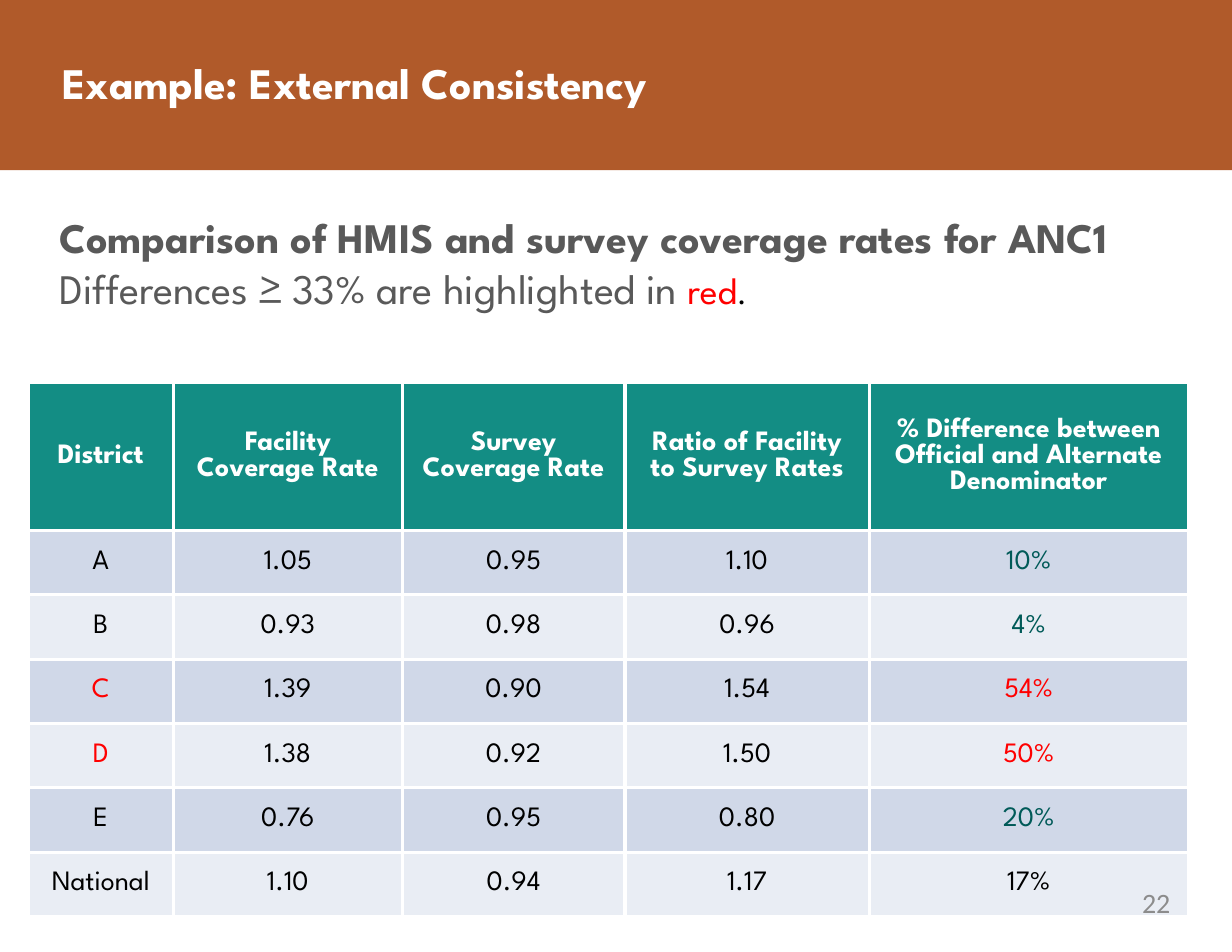
from lxml.etree import SubElement
from pptx import Presentation
from pptx.dml.color import RGBColor
from pptx.enum.shapes import MSO_SHAPE
from pptx.enum.text import MSO_ANCHOR, PP_ALIGN
from pptx.oxml.ns import qn
from pptx.util import Pt

COLORS = {
    "banner": "B05A2A", "white": "FFFFFF", "header": "138D84", "odd": "D0D8E8",
    "even": "E9EDF4", "black": "000000", "green": "005A58", "red": "FF0000",
    "gray": "595959", "number": "8C8C8C",
}
HEADINGS = [
    "District", "Facility Coverage Rate", "Survey Coverage Rate",
    "Ratio of Facility to Survey Rates",
    "% Difference between Official and Alternate Denominator",
]
DISTRICTS = [
    ("A", "1.05", "0.95", "1.10", "10%"),
    ("B", "0.93", "0.98", "0.96", "4%"),
    ("C", "1.39", "0.90", "1.54", "54%"),
    ("D", "1.38", "0.92", "1.50", "50%"),
    ("E", "0.76", "0.95", "0.80", "20%"),
    ("National", "1.10", "0.94", "1.17", "17%"),
]
COLUMN_SHARES = [1.3, 2.04, 1.99, 2.18, 2.85]
HEADER_HEIGHT = 95
THRESHOLD = 33


def color(name):
    """Return the named colour."""
    return RGBColor.from_string(COLORS[name])


def format_run(run, size, color_name, bold=False, font="League Spartan"):
    """Set the font of one run."""
    run.font.size = Pt(size)
    run.font.name = font
    run.font.bold = bold
    run.font.color.rgb = color(color_name)


def add_text(slide, box, runs, align=PP_ALIGN.LEFT, insets=(0, 0)):
    """Add a one-paragraph text box made of (text, format) runs."""
    text_frame = slide.shapes.add_textbox(*map(Pt, box)).text_frame
    text_frame.word_wrap = True
    text_frame.margin_left = text_frame.margin_right = Pt(insets[0])
    text_frame.margin_top = text_frame.margin_bottom = Pt(insets[1])
    paragraph = text_frame.paragraphs[0]
    paragraph.alignment = align
    for text, run_format in runs:
        run = paragraph.add_run()
        run.text = text
        format_run(run, *run_format)


def add_banner(slide, box):
    """Add the colour band with the slide title."""
    left, top, width, height = box
    band = slide.shapes.add_shape(MSO_SHAPE.RECTANGLE, *map(Pt, box))
    band.shadow.inherit = False
    band.fill.solid()
    band.fill.fore_color.rgb = color("banner")
    band.line.fill.background()
    add_text(slide, (left + 40.3, top + 36, width - 34, 33.8),
             [("Example: External Consistency", (28, "white", True))])


def add_introduction(slide, box):
    """Add the comparison heading and the key to the red values."""
    add_text(slide, box, [
        ("Comparison of HMIS and survey coverage rates for ANC1 ", (27, "gray", True)),
        ("Differences ≥ 33% are highlighted in ", (27, "gray")),
        ("red", (24, "red")),
        (".", (20, "black")),
    ], insets=(7.9, 4.3))


def set_borders(cell):
    """Draw white lines on the four sides of a cell."""
    properties = cell._tc.get_or_add_tcPr()
    for index, side in enumerate(("a:lnL", "a:lnR", "a:lnT", "a:lnB")):
        line = properties.makeelement(qn(side), {"w": str(Pt(2.25))})
        fill = SubElement(line, qn("a:solidFill"))
        SubElement(fill, qn("a:srgbClr"), val=COLORS["white"])
        properties.insert(index, line)


def format_cell(cell, text, fill_name, text_name, bold):
    """Fill a table cell and set its centred text."""
    cell.text_frame.text = text
    cell.vertical_anchor = MSO_ANCHOR.MIDDLE
    cell.margin_left = cell.margin_right = Pt(7.9)
    cell.margin_top = cell.margin_bottom = Pt(4.3)
    cell.fill.solid()
    cell.fill.fore_color.rgb = color(fill_name)
    set_borders(cell)
    paragraph = cell.text_frame.paragraphs[0]
    paragraph.alignment = PP_ALIGN.CENTER
    format_run(paragraph.runs[0], 18, text_name, bold)


def text_color(values, column):
    """Choose the text colour of a value from its row's difference."""
    is_high = int(values[-1].rstrip("%")) >= THRESHOLD
    if column in (0, len(values) - 1) and is_high:
        return "red"
    if column == len(values) - 1 and values[0] != "National":
        return "green"
    return "black"


def add_coverage_table(slide, box):
    """Add the table of coverage rates by district."""
    width, height = box[2:]
    table = slide.shapes.add_table(
        len(DISTRICTS) + 1, len(HEADINGS), *map(Pt, box)).table
    for column, share in zip(table.columns, COLUMN_SHARES):
        column.width = Pt(width * share / sum(COLUMN_SHARES))
    for row in table.rows:
        row.height = Pt((height - HEADER_HEIGHT) / len(DISTRICTS))
    table.rows[0].height = Pt(HEADER_HEIGHT)
    for column, heading in enumerate(HEADINGS):
        format_cell(table.cell(0, column), heading, "header", "white", True)
    for row, values in enumerate(DISTRICTS, start=1):
        fill_name = "odd" if row % 2 else "even"
        for column, value in enumerate(values):
            format_cell(table.cell(row, column), value, fill_name,
                        text_color(values, column), False)


def add_slide_number(slide, box):
    """Add the slide number at the lower right."""
    add_text(slide, box, [("22", (18, "number", False, "Calibri"))], PP_ALIGN.RIGHT)


def main():
    """Build and save the presentation."""
    presentation = Presentation()
    presentation.slide_width, presentation.slide_height = Pt(792), Pt(612)
    slide = presentation.slides.add_slide(presentation.slide_layouts[6])
    add_banner(slide, (0, 0, 792, 109.4))
    add_coverage_table(slide, (18, 246, 746, 343.3))
    add_introduction(slide, (30.2, 131.8, 749.5, 73.4))
    add_slide_number(slide, (570.2, 569.5, 182.2, 30.2))
    presentation.save("out.pptx")


if __name__ == "__main__":
    main()
